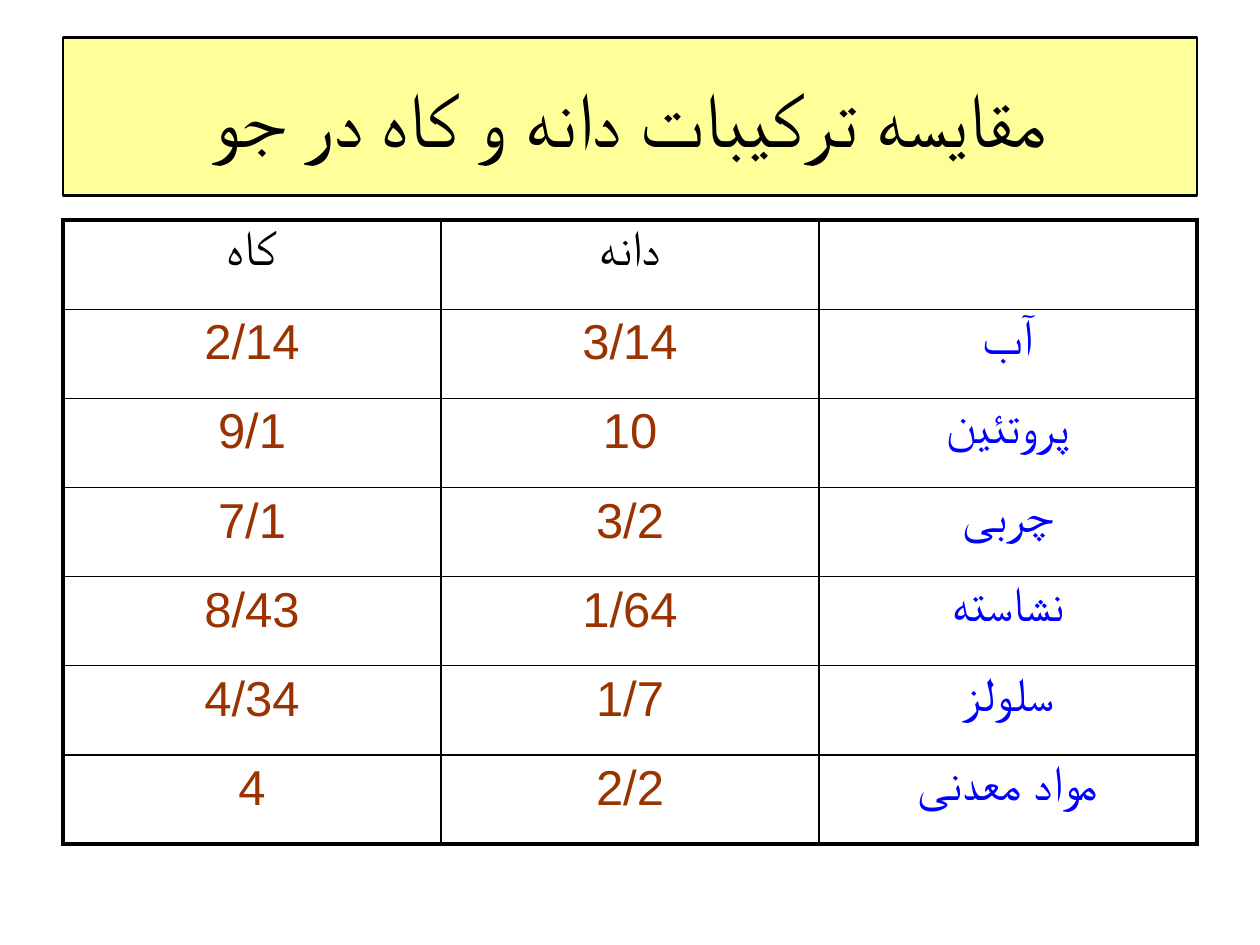
from lxml import etree
from pptx import Presentation
from pptx.dml.color import RGBColor
from pptx.enum.shapes import MSO_SHAPE
from pptx.enum.text import MSO_ANCHOR, PP_ALIGN
from pptx.oxml.ns import qn
from pptx.util import Inches, Pt

RECTANGLE = MSO_SHAPE.RECTANGLE
MIDDLE = MSO_ANCHOR.MIDDLE
CENTER = PP_ALIGN.CENTER

BLACK = RGBColor(0x00, 0x00, 0x00)
PALE_YELLOW = RGBColor(0xFF, 0xFF, 0x99)
BROWN = RGBColor(0x99, 0x33, 0x00)
BLUE = RGBColor(0x00, 0x00, 0xFF)

FONT = "Arial"
OUTER_BORDER = Pt(2.25)
INNER_BORDER = Pt(1)

SLIDE_W, SLIDE_H = Inches(10), Inches(7.5)
MARGIN = 0.05  # share of the slide width

TITLE = "مقایسه ترکیبات دانه و کاه در جو"
COMPOSITION = [  # straw, grain, component
    ("کاه", "دانه", ""),
    ("2/14", "3/14", "آب"),
    ("9/1", "10", "پروتئین"),
    ("7/1", "3/2", "چربی"),
    ("8/43", "1/64", "نشاسته"),
    ("4/34", "1/7", "سلولز"),
    ("4", "2/2", "مواد معدنی"),
]


def band(top, bottom):
    """Box between the side margins, from shares of the slide height."""
    return (int(SLIDE_W * MARGIN), int(SLIDE_H * top),
            int(SLIDE_W * (1 - 2 * MARGIN)), int(SLIDE_H * (bottom - top)))


def add_centred_run(paragraph, text, size, color):
    paragraph.alignment = CENTER
    run = paragraph.add_run()
    run.text = text
    run.font.name = FONT
    run.font.size = Pt(size)
    run.font.color.rgb = color


def add_title(slide, box):
    banner = slide.shapes.add_shape(RECTANGLE, *box)
    banner.shadow.inherit = False
    banner.fill.solid()
    banner.fill.fore_color.rgb = PALE_YELLOW
    banner.line.color.rgb = BLACK
    banner.line.width = Pt(1.5)
    frame = banner.text_frame
    frame.word_wrap = True
    frame.vertical_anchor = MIDDLE
    heading = frame.paragraphs[0]
    add_centred_run(heading, TITLE, 44, BLACK)
    heading._p.get_or_add_pPr().set("rtl", "1")


def add_border(cell, side, width):
    line = etree.SubElement(cell._tc.get_or_add_tcPr(), qn(f"a:ln{side}"), w=str(width))
    fill = etree.SubElement(line, qn("a:solidFill"))
    etree.SubElement(fill, qn("a:srgbClr"), val=str(BLACK))


def add_composition_table(slide, box):
    last_row, last_column = len(COMPOSITION) - 1, len(COMPOSITION[0]) - 1
    table = slide.shapes.add_table(last_row + 1, last_column + 1, *box).table
    table.first_row = table.horz_banding = False
    for r, values in enumerate(COMPOSITION):
        for c, value in enumerate(values):
            cell = table.cell(r, c)
            on_edge = {"L": c == 0, "R": c == last_column,
                       "T": r == 0, "B": r == last_row}
            for side, outer in on_edge.items():
                add_border(cell, side, OUTER_BORDER if outer else INNER_BORDER)
            cell.fill.background()
            if not value:
                continue
            color = BLACK if r == 0 else BLUE if c == last_column else BROWN
            entry = cell.text_frame.paragraphs[0]
            add_centred_run(entry, value, 28, color)
            spacing = etree.SubElement(entry._p.get_or_add_pPr(), qn("a:spcBef"))
            etree.SubElement(spacing, qn("a:spcPct"), val="20000")


def main():
    prs = Presentation()
    prs.slide_width, prs.slide_height = SLIDE_W, SLIDE_H
    blank_layout = prs.slide_layouts[6]
    slide = prs.slides.add_slide(blank_layout)
    add_title(slide, band(0.04, 0.207))
    add_composition_table(slide, band(0.233, 0.893))
    prs.save("out.pptx")


if __name__ == "__main__":
    main()
